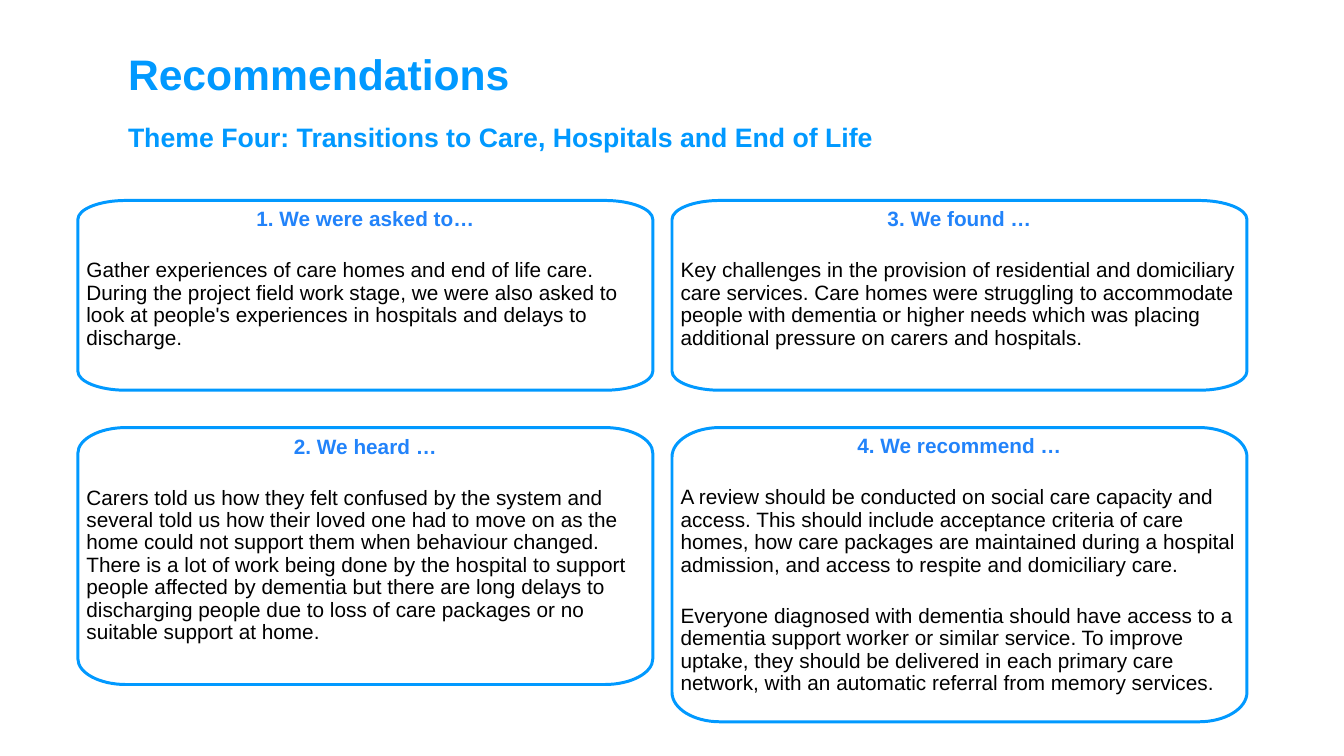
"""Build the Recommendations slide: a title over four rounded panels."""
from pptx import Presentation
from pptx.dml.color import RGBColor
from pptx.enum.text import MSO_ANCHOR as Anchor, MSO_AUTO_SIZE as Fit, PP_ALIGN as Align
from pptx.oxml import parse_xml
from pptx.oxml.ns import nsdecls
from pptx.util import Inches, Pt

COLORS = {"sky": "0199FF", "blue": "2283FA", "ink": "000000", "paper": "FFFFFF"}
TITLE = [
    ("Recommendations", 28.8),
    ("Theme Four: Transitions to Care, Hospitals and End of Life", 18),
]
PANELS = [
    (0, 0, 1.78, "1. We were asked to…", [
        "Gather experiences of care homes and end of life care. During the project "
        "field work stage, we were also asked to look at people's experiences in "
        "hospitals and delays to discharge."]),
    (0, 1, 2.41, "2. We heard …", [
        "Carers told us how they felt confused by the system and several told us how "
        "their loved one had to move on as the home could not support them when "
        "behaviour changed. There is a lot of work being done by the hospital to "
        "support people affected by dementia but there are long delays to discharging "
        "people due to loss of care packages or no suitable support at home."]),
    (1, 0, 1.78, "3. We found …", [
        "Key challenges in the provision of residential and domiciliary care services. "
        "Care homes were struggling to accommodate people with dementia or higher "
        "needs which was placing additional pressure on carers and hospitals."]),
    (1, 1, 2.76, "4. We recommend …", [
        "A review should be conducted on social care capacity and access. This should "
        "include acceptance criteria of care homes, how care packages are maintained "
        "during a hospital admission, and access to respite and domiciliary care.",
        "Everyone diagnosed with dementia should have access to a dementia support "
        "worker or similar service. To improve uptake, they should be delivered in "
        "each primary care network, with an automatic referral from memory services."]),
]
LEFT, TOP, WIDE = 0.73, 1.88, 5.39
COL_STEP, ROW_STEP = 5.57, 2.13
CURVE, BEND = 0.45, 0.55
GAP = 19.3


def rgb(name):
    return RGBColor.from_string(COLORS[name])


def style(font, size, color, bold):
    for key, value in {"name": "Arial", "size": Pt(size), "bold": bold}.items():
        setattr(font, key, value)
    font.color.rgb = rgb(color)


def set_frame(frame, inset):
    pad = Inches(inset)
    values = {"word_wrap": True, "auto_size": Fit.NONE, "vertical_anchor": Anchor.TOP,
              "margin_left": pad, "margin_top": pad, "margin_right": pad,
              "margin_bottom": pad}
    for key, value in values.items():
        setattr(frame, key, value)


def outline(x, y, wide, high):
    """Return the eight points where the sides of a panel meet its corners."""
    rx, ry = CURVE, high / 10
    right, base = x + wide, y + high
    points = [(x, y + ry), (x + rx, y), (right - rx, y), (right, y + ry),
              (right, base - ry), (right - rx, base), (x + rx, base), (x, base - ry)]
    return [(Inches(px), Inches(py)) for px, py in points]


def round_off(panel):
    """Turn the four corner lines of a panel into curves."""
    nodes = panel.element.xpath(".//a:moveTo | .//a:lnTo")
    spots = [(int(n[0].get("x")), int(n[0].get("y"))) for n in nodes]
    for rank in range(1, len(nodes), 2):
        start, end = spots[rank - 1], spots[rank]
        upright = rank % 4 == 1
        tip = (start[0], end[1]) if upright else (end[0], start[1])
        pulls = [tuple(round(p + BEND * (t - p)) for p, t in zip(spot, tip))
                 for spot in (start, end)]
        marks = "".join(f'<a:pt x="{x}" y="{y}"/>' for x, y in pulls + [end])
        curve = parse_xml(f'<a:cubicBezTo {nsdecls("a")}>{marks}</a:cubicBezTo>')
        nodes[rank].getparent().replace(nodes[rank], curve)


def add_title(slide):
    title = slide.shapes.title
    title.left, title.top, title.width, title.height = map(Inches, (1.2, 0.43, 8.81, 0.54))
    set_frame(title.text_frame, 0)
    para = title.text_frame.paragraphs[0]
    para.alignment, para.line_spacing = Align.LEFT, Pt(36)
    for row, (text, size) in enumerate(TITLE):
        if row:
            para.add_line_break()
        run = para.add_run()
        run.text = text
        style(run.font, size, "sky", True)


def add_panel(slide, col, row, high, head, body):
    points = outline(LEFT + col * COL_STEP, TOP + row * ROW_STEP, WIDE, high)
    pen = slide.shapes.build_freeform(*points[0])
    pen.add_line_segments(points[1:], close=True)
    panel = pen.convert_to_shape()
    round_off(panel)
    panel.shadow.inherit = False
    panel.fill.solid()
    panel.fill.fore_color.rgb = rgb("paper")
    panel.line.color.rgb, panel.line.width = rgb("sky"), Pt(2)
    frame = panel.text_frame
    set_frame(frame, 0.08)
    looks = [(head, Align.CENTER, "blue", True)]
    looks += [(text, Align.LEFT, "ink", False) for text in body]
    for rank, (text, align, color, bold) in enumerate(looks):
        para = frame.add_paragraph() if rank else frame.paragraphs[0]
        para.alignment, para.line_spacing = align, 0.9
        para.space_before = Pt(GAP if rank else 0)
        run = para.add_run()
        run.text = text
        style(run.font, 14, color, bold)


def main():
    deck = Presentation()
    deck.slide_width, deck.slide_height = Inches(12.6), Inches(7.09)
    slide = deck.slides.add_slide(deck.slide_layouts[5])
    add_title(slide)
    for panel in PANELS:
        add_panel(slide, *panel)
    deck.save("out.pptx")


if __name__ == "__main__":
    main()
